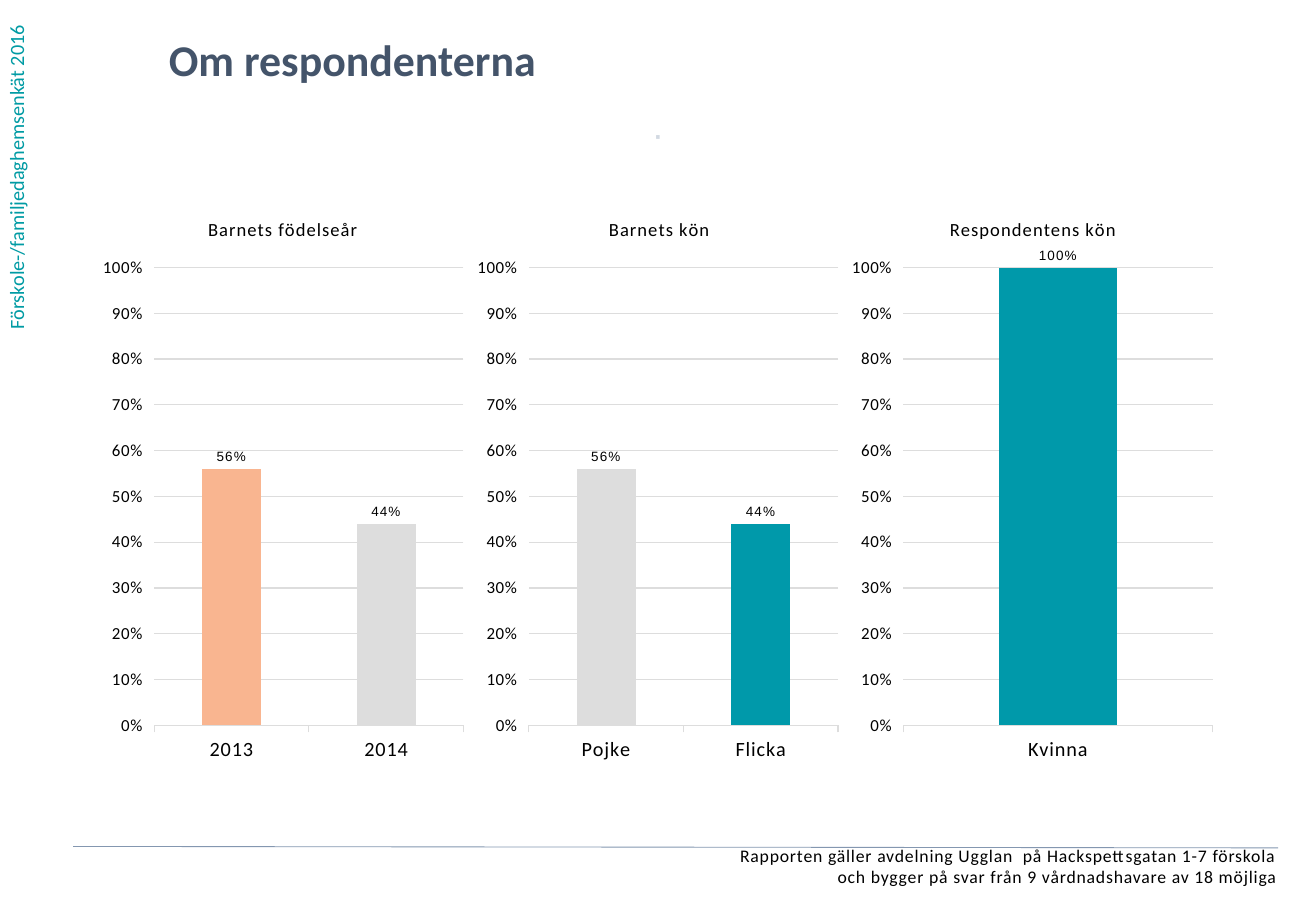
from dataclasses import dataclass

from lxml import etree
from pptx import Presentation
from pptx.chart.data import CategoryChartData
from pptx.dml.color import RGBColor
from pptx.enum import chart as ch, shapes, text
from pptx.oxml import parse_xml
from pptx.oxml.ns import nsdecls, qn
from pptx.util import Cm, Pt


@dataclass(frozen=True)
class Theme:
    face: str = "Calibri"
    tag_face: str = "Arial"
    black: str = "000000"
    slate: str = "44546A"
    side: str = "009BA4"
    dot: str = "D2D9E2"
    rule: str = "8497B0"
    teal: str = "0099AA"
    grey: str = "DDDDDD"
    peach: str = "F9B590"
    head: float = 26
    body: float = 12
    title: float = 11
    note: float = 10.5
    axis: float = 10
    tag: float = 8
    space: int = 50


T = Theme()
SIDE = "Förskole-/familjedaghemsenkät 2016"
HEAD = "Om respondenterna"
DOT = "⋅"
NOTE = ("Rapporten gäller avdelning Ugglan  på Hackspettsgatan 1-7 förskola",
        "och bygger på svar från 9 vårdnadshavare av 18 möjliga")
# title, left share of title, (category, value, colour)
CHARTS = [
    ("Barnets födelseår", 0.29, [("2014", 0.44, T.grey), ("2013", 0.56, T.peach)]),
    ("Barnets kön", 0.36, [("Flicka", 0.44, T.teal), ("Pojke", 0.56, T.grey)]),
    ("Respondentens kön", 0.27, [("Kvinna", 1, T.teal)]),
]
LEFT, TOP, WIDE, HIGH = 2.01, 4.06, 7.83, 12.09
PERCENT = "0%;0%"


def style(font, size, color=T.black, face=T.face, bold=False, space=0):
    font.size, font.name, font.bold = Pt(size), face, bold
    font.color.rgb = RGBColor.from_string(color)
    if space:
        font._element.set("spc", str(space))


def write(frame, words, align=None, **form):
    para = frame.paragraphs[0]
    para.text = words
    if align is not None:
        para.alignment = align
    for run in para.runs:
        style(run.font, **form)


def label(slide, words, box, inset=(0, 0), **form):
    frame = slide.shapes.add_textbox(*map(Cm, box)).text_frame
    frame.word_wrap = True
    frame.margin_left = frame.margin_right = Cm(inset[0])
    frame.margin_top = frame.margin_bottom = Cm(inset[1])
    write(frame, words, **form)
    return frame


def layout(inner=False, **shares):
    """Manual chart layout, in shares of the chart frame."""
    target = '<c:layoutTarget val="inner"/>' if inner else ""
    modes = "".join(f'<c:{k}Mode val="edge"/>' for k in "xy")
    sizes = "".join(f'<c:{k} val="{v}"/>' for k, v in shares.items())
    return parse_xml(f'<c:layout {nsdecls("c")}><c:manualLayout>{target}{modes}'
                     f"{sizes}</c:manualLayout></c:layout>")


def place(parent, node, after=None):
    for old in parent.findall(qn("c:layout")):
        parent.remove(old)
    if after is None:
        parent.insert(0, node)
    else:
        after.addnext(node)


def stroke(line, color, width):
    line.color.rgb = RGBColor.from_string(color)
    line.width = Pt(width)


def bars(slide, col, title, start, rows):
    data = CategoryChartData(number_format="0%")
    data.categories = [name for name, _, _ in rows]
    data.add_series("Series 1", [value for _, value, _ in rows])
    chart = slide.shapes.add_chart(
        ch.XL_CHART_TYPE.COLUMN_CLUSTERED, Cm(LEFT + col * WIDE), Cm(TOP),
        Cm(WIDE), Cm(HIGH), data).chart
    style(chart.font, T.axis)
    chart.has_legend = False
    chart.has_title = True
    write(chart.chart_title.text_frame, title, size=T.title, space=T.space)
    head = chart.chart_title._element
    place(head, layout(x=start, y=0.033), head.find(qn("c:tx")))
    place(chart._chartSpace.chart.plotArea,
          layout(inner=True, x=0.155, y=0.127, w=0.826, h=0.792))

    cats, vals = chart.category_axis, chart.value_axis
    cats.reverse_order = True
    cats.has_major_gridlines = False
    stroke(cats.format.line, T.grey, 0.75)
    style(cats.tick_labels.font, T.body, space=T.space)
    vals.minimum_scale, vals.maximum_scale, vals.major_unit = 0, 1, 0.1
    vals.tick_label_position = ch.XL_TICK_LABEL_POSITION.HIGH
    vals.format.line.fill.background()
    stroke(vals.major_gridlines.format.line, T.grey, 0.75)
    style(vals.tick_labels.font, T.axis, space=T.space)
    vals.tick_labels.number_format = PERCENT
    vals.tick_labels.number_format_is_linked = False

    plot = chart.plots[0]
    plot.gap_width = 162
    plot.vary_by_categories = False
    series = plot.series[0]
    series.format.fill.solid()
    series.format.fill.fore_color.rgb = RGBColor.from_string(T.teal)
    for i, (_, _, color) in enumerate(rows):
        look = series.points[i].format
        look.fill.solid()
        look.fill.fore_color.rgb = RGBColor.from_string(color)
        look.line.fill.background()
    tags = series.data_labels
    tags.show_value = True
    tags.position = ch.XL_LABEL_POSITION.OUTSIDE_END
    tags.number_format, tags.number_format_is_linked = PERCENT, False
    style(tags.font, T.tag, face=T.tag_face, space=T.space)


def main():
    deck = Presentation()
    deck.slide_width, deck.slide_height = Cm(27.51), Cm(19.05)
    slide = deck.slides.add_slide(deck.slide_layouts[6])

    side = label(slide, SIDE, (-0.05, 0, 1.02, 7.14), inset=(0.13, 0.25),
                 size=T.body, color=T.side)
    side._txBody.bodyPr.set("vert", "vert270")
    label(slide, HEAD, (3.53, 0.69, 21.18, 1.45),
          size=T.head, color=T.slate, bold=True)
    label(slide, "\v".join(NOTE), (0.28, 17.66, 26.42, 1.09),
          align=text.PP_ALIGN.RIGHT, size=T.note, space=T.space)
    label(slide, DOT, (LEFT + WIDE, 2.59, WIDE, 0.99),
          align=text.PP_ALIGN.CENTER, size=T.body, color=T.dot, bold=True,
          space=T.space)
    for col, row in enumerate(CHARTS):
        bars(slide, col, *row)

    rule = slide.shapes.add_connector(
        shapes.MSO_CONNECTOR.STRAIGHT, Cm(1.53), Cm(17.7), Cm(26.72), Cm(17.73))
    stroke(rule.line, T.rule, 0.5)
    etree.SubElement(rule._element.spPr, qn("a:effectLst"))
    deck.save("out.pptx")


if __name__ == "__main__":
    main()
